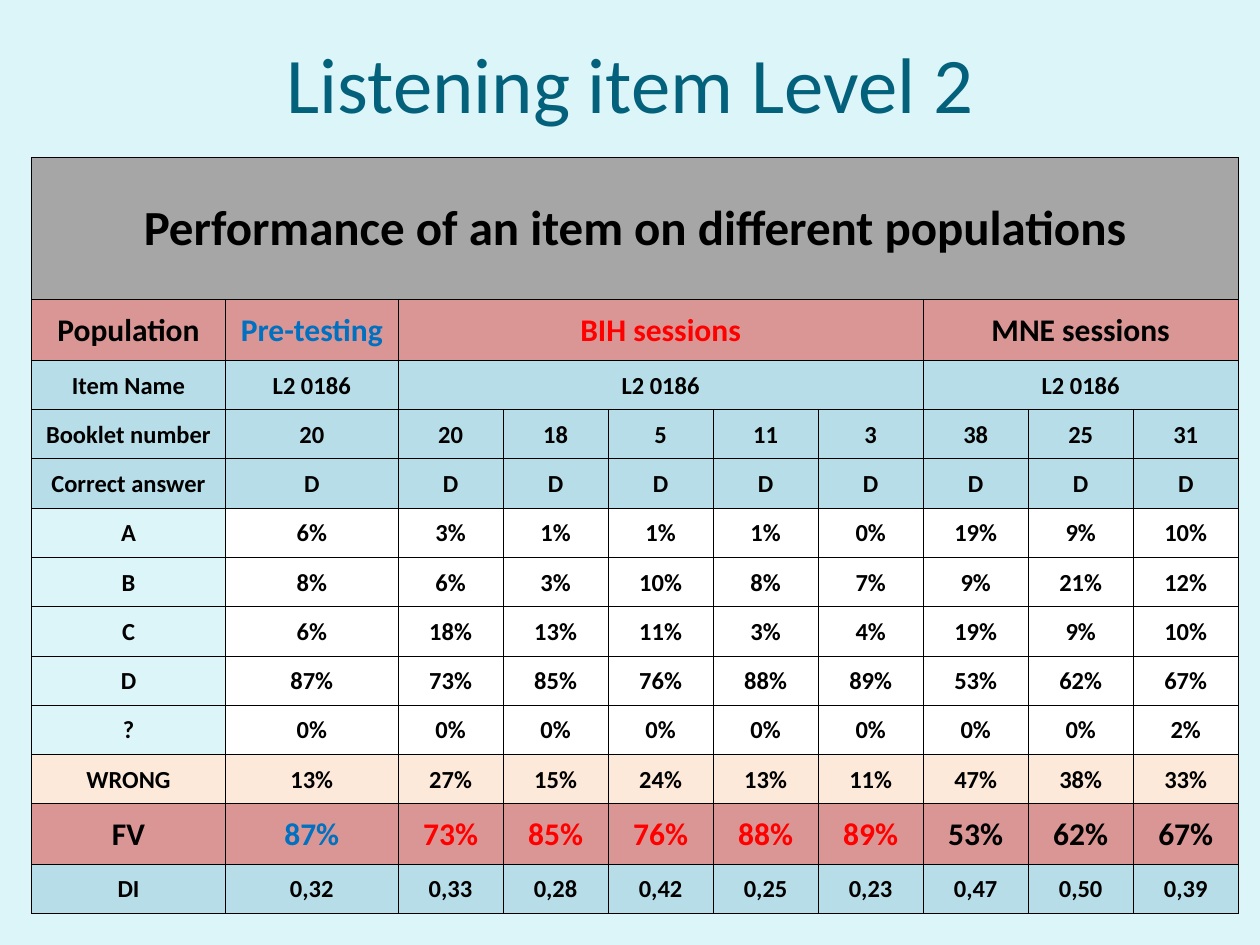
from lxml import etree
from pptx import Presentation
from pptx import util as u
from pptx.dml.color import RGBColor
from pptx.enum import text
from pptx.oxml.ns import qn

BLACK, BLUE, RED = "000000", "0070C0", "FF0000"
GREY, ROSE, SKY, PEACH, WHITE = "A6A6A6", "DA9694", "B7DEE8", "FDE9D9", "FFFFFF"
SPANS = {1: [10], 4: [1, 1, 5, 3], 10: [1] * 10}
GROUP_COLORS = [BLACK, BLUE] + [RED] * 5 + [BLACK] * 3
LABEL_WIDTH, PRETEST_WIDTH = 1.54, 1.37
BANNER_HEIGHT, ACCENT_HEIGHT = 1.13, 0.48

ROWS = [
    (GREY, 28, "Performance of an item on different populations"),
    (ROSE, 18, "Population|Pre-testing|BIH sessions|MNE sessions"),
    (SKY, 14, "Item Name|L2 0186|L2 0186|L2 0186"),
    (SKY, 14, "Booklet number|20|20|18|5|11|3|38|25|31"),
    (SKY, 14, "Correct answer|D|D|D|D|D|D|D|D|D"),
    (WHITE, 14, "A|6%|3%|1%|1%|1%|0%|19%|9%|10%"),
    (WHITE, 14, "B|8%|6%|3%|10%|8%|7%|9%|21%|12%"),
    (WHITE, 14, "C|6%|18%|13%|11%|3%|4%|19%|9%|10%"),
    (WHITE, 14, "D|87%|73%|85%|76%|88%|89%|53%|62%|67%"),
    (WHITE, 14, "?|0%|0%|0%|0%|0%|0%|0%|0%|2%"),
    (PEACH, 14, "WRONG|13%|27%|15%|24%|13%|11%|47%|38%|33%"),
    (ROSE, 18, "FV|87%|73%|85%|76%|88%|89%|53%|62%|67%"),
    (SKY, 14, "DI|0,32|0,33|0,28|0,42|0,25|0,23|0,47|0,50|0,39"),
]


def rgb(value):
    return RGBColor.from_string(value)


def write(frame, words, size, color=BLACK, bold=False):
    paragraph = frame.paragraphs[0]
    paragraph.alignment = text.PP_ALIGN.CENTER
    run = paragraph.add_run()
    run.text = words
    run.font.name = "Calibri"
    run.font.size = u.Pt(size)
    run.font.bold = bold
    run.font.color.rgb = rgb(color)


def outline(cell):
    properties = cell._tc.get_or_add_tcPr()
    for side in ("lnL", "lnR", "lnT", "lnB"):
        line = etree.SubElement(properties, qn(f"a:{side}"), w=str(u.Pt(0.5)))
        solid = etree.SubElement(line, qn("a:solidFill"))
        etree.SubElement(solid, qn("a:srgbClr"), val=BLACK)


def format_cell(cell, fill):
    cell.margin_left = cell.margin_right = cell.margin_top = u.Inches(0.01)
    cell.margin_bottom = 0
    cell.vertical_anchor = text.MSO_ANCHOR.MIDDLE
    outline(cell)
    if fill:
        cell.fill.solid()
        cell.fill.fore_color.rgb = rgb(fill)
    else:
        cell.fill.background()


def add_title(slide, left, top, width, height):
    title = slide.shapes.add_textbox(*map(u.Inches, (left, top, width, height)))
    frame = title.text_frame
    frame.word_wrap = True
    frame.margin_left = frame.margin_right = frame.margin_bottom = 0
    frame.vertical_anchor = text.MSO_ANCHOR.MIDDLE
    write(frame, "Listening item Level 2", size=45, color="04617B")


def add_results(slide, left, top, width, height):
    frame = slide.shapes.add_table(
        len(ROWS), 10, *map(u.Inches, (left, top, width, height)))
    results = frame.table
    results.first_row = results.horz_banding = False
    session_width = (width - LABEL_WIDTH - PRETEST_WIDTH) / 8
    for column, size in zip(results.columns,
                            [LABEL_WIDTH, PRETEST_WIDTH] + [session_width] * 8):
        column.width = u.Inches(size)
    plain_height = (height - BANNER_HEIGHT - 2 * ACCENT_HEIGHT) / (len(ROWS) - 3)
    heights = {28: BANNER_HEIGHT, 18: ACCENT_HEIGHT, 14: plain_height}

    for r, (fill, size, line) in enumerate(ROWS):
        results.rows[r].height = u.Inches(heights[size])
        for c in range(10):
            format_cell(results.cell(r, c), None if fill == WHITE and c == 0 else fill)
        entries = line.split("|")
        c = 0
        for entry, span in zip(entries, SPANS[len(entries)]):
            cell = results.cell(r, c)
            if span > 1:
                cell.merge(results.cell(r, c + span - 1))
            color = GROUP_COLORS[c] if fill == ROSE else BLACK
            write(cell.text_frame, entry, size=size, color=color, bold=True)
            c += span


def main():
    deck = Presentation()
    deck.slide_width, deck.slide_height = u.Inches(10), u.Inches(7.5)
    slide = deck.slides.add_slide(deck.slide_layouts[6])
    slide.background.fill.solid()
    slide.background.fill.fore_color.rgb = rgb("DBF5F9")
    add_title(slide, 0.5, 0.25, 9, 0.75)
    add_results(slide, 0.25, 1.25, 9.58, 6)
    deck.save("out.pptx")


if __name__ == "__main__":
    main()
